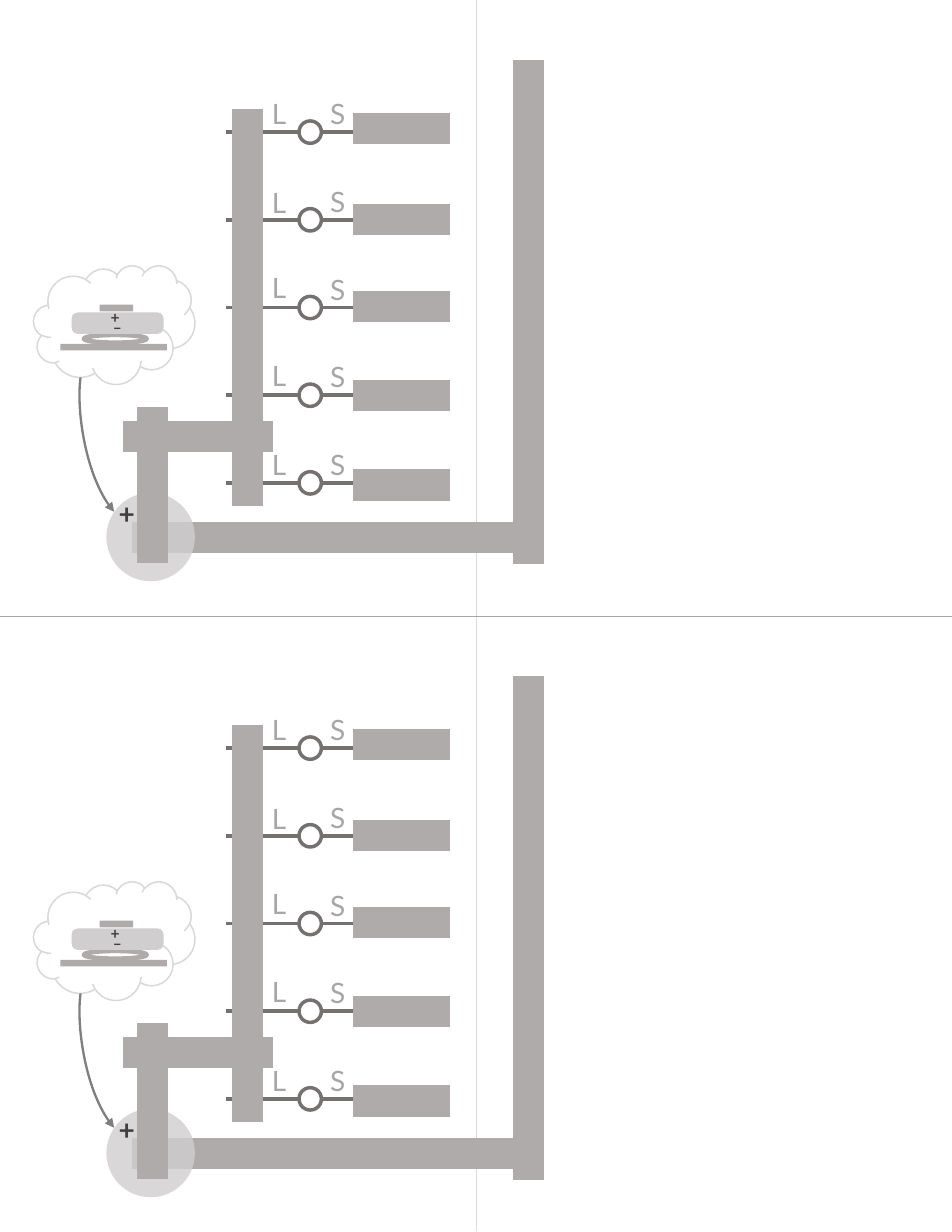
from dataclasses import dataclass

from lxml.etree import SubElement
from pptx import Presentation
from pptx.dml.color import RGBColor
from pptx.enum.shapes import MSO_CONNECTOR, MSO_SHAPE
from pptx.enum.text import MSO_AUTO_SIZE
from pptx.oxml.ns import qn
from pptx.util import Inches, Pt

COLUMNS, ROWS = 85, 55  # grid of one panel
TRACE, WIRE, PALE, DARK = "AFABAB", "767171", "D0CECE", "404040"
LETTER, CLOUD, ARROW = "A6A6A6", "D9D9D9", "7F7F7F"
FONT = "Lato"

# One light per row: rows of the pad and of the tops of its two letters
LIGHTS = [
    (11.5, 8.1, 8.1),
    (19.6, 16.1, 16.0),
    (27.4, 23.7, 23.8),
    (35.3, 31.5, 31.6),
    (43.3, 39.5, 39.5),
]
FIRST_WIRE, WIRE_STEP = 11.8, 7.83


@dataclass
class Box:
    left: int
    top: int
    width: int
    height: int

    def across(self, columns):
        return round(self.width * columns / COLUMNS)

    def down(self, rows):
        return round(self.height * rows / ROWS)

    def point(self, column, row):
        return self.left + self.across(column), self.top + self.down(row)

    def area(self, column, row, columns, rows):
        return *self.point(column, row), self.across(columns), self.down(rows)


def color(value):
    return RGBColor.from_string(value)


def set_line(line, value, points):
    line.color.rgb = color(value)
    line.width = Pt(points)


def add_line(shapes, box, start, end, value=TRACE, points=20):
    line = shapes.add_connector(
        MSO_CONNECTOR.STRAIGHT, *box.point(*start), *box.point(*end))
    set_line(line.line, value, points)
    SubElement(line._element.spPr, qn("a:effectLst"))


def add_figure(shapes, kind, area, fill=None, outline=None):
    figure = shapes.add_shape(kind, *area)
    figure.shadow.inherit = False
    if fill:
        figure.fill.solid()
        figure.fill.fore_color.rgb = color(fill)
    else:
        figure.fill.background()
    if outline:
        set_line(figure.line, *outline)
    else:
        figure.line.fill.background()
    return figure


def add_label(shapes, area, text, value=LETTER, size=18, bold=False):
    frame = shapes.add_textbox(*area).text_frame
    frame.word_wrap = False
    frame.auto_size = MSO_AUTO_SIZE.SHAPE_TO_FIT_TEXT
    frame.text = text
    font = frame.paragraphs[0].runs[0].font
    font.name, font.size, font.bold = FONT, Pt(size), bold
    font.color.rgb = color(value)


def add_curve(shapes, points):
    builder = shapes.build_freeform(*points[0])
    builder.add_line_segments(points[1:], close=False)
    curve = builder.convert_to_shape()
    curve.shadow.inherit = False
    curve.fill.background()
    set_line(curve.line, ARROW, 1.5)
    SubElement(curve.line._get_or_add_ln(), qn("a:tailEnd"), type="triangle")
    # Turn the three straight segments into one Bezier segment
    outline = next(curve._element.iter(qn("a:path")))
    segments = outline.findall(qn("a:lnTo"))
    bezier = SubElement(outline, qn("a:cubicBezTo"))
    for segment in segments:
        bezier.append(segment[0])
        outline.remove(segment)


def add_quarters(shapes, area):
    table = shapes.add_table(2, 2, *area).table
    table.first_row = table.horz_banding = False
    for row in range(2):
        for column in range(2):
            cell = table.cell(row, column)
            cell.fill.background()
            properties = cell._tc.get_or_add_tcPr()
            borders = [("a:lnL" if column else "a:lnR", "D9D9D9", 0.25),
                       ("a:lnT" if row else "a:lnB", "A6A6A6", 0.5)]
            for index, (side, value, points) in enumerate(borders):
                border = SubElement(properties, qn(side), w=str(Pt(points)))
                fill = SubElement(border, qn("a:solidFill"))
                SubElement(fill, qn("a:srgbClr"), val=value)
                properties.insert(index, border)


def add_lights(shapes, box):
    # Wires with round lights
    group = shapes.add_group_shape()
    for index in range(len(LIGHTS)):
        row = FIRST_WIRE + index * WIRE_STEP
        add_line(group.shapes, box, (35.2, row), (20.2, row), WIRE, 2.25)
        add_figure(group.shapes, MSO_SHAPE.OVAL, box.area(26.7, row - 1, 2, 2),
                   "FFFFFF", (WIRE, 2.25))
    # Shared trace, pads and leg letters
    add_line(shapes, box, (22.1, 9.7), (22.1, 45.2))
    for pad, long_leg, short_leg in LIGHTS:
        add_line(shapes, box, (40.2, pad), (31.5, pad))
        add_label(shapes, box.area(23.3, long_leg, 3.2, 4), "L")
        add_label(shapes, box.area(28.5, short_leg, 3.4, 4), "S")


def add_battery_spot(shapes, box):
    spot = add_figure(shapes, MSO_SHAPE.OVAL, box.area(9.5, 44, 7.9, 7.9), PALE)
    tint = next(spot._element.spPr.iter(qn("a:srgbClr")))
    SubElement(tint, qn("a:alpha"), val="80000")
    add_line(shapes, box, (13.6, 36.3), (13.6, 50.3))
    add_label(shapes, box.area(9.6, 43.8, 3.8, 4), "+", DARK, bold=True)


def add_battery_cloud(shapes, box):
    add_figure(shapes, MSO_SHAPE.CLOUD, box.area(3, 23.7, 14.4, 10.6),
               "FFFFFF", (CLOUD, 1))
    # Battery between two traces
    add_figure(shapes, MSO_SHAPE.RECTANGLE, box.area(5.4, 30.7, 9.5, 0.6), TRACE)
    add_figure(shapes, MSO_SHAPE.OVAL, box.area(7.5, 29.9, 5.6, 0.7),
               outline=(TRACE, 3))
    battery = add_figure(shapes, MSO_SHAPE.ROUNDED_RECTANGLE,
                         box.area(6.4, 27.9, 8.2, 1.9), PALE)
    battery.adjustments[0] = 0.28
    add_label(shapes, box.area(9.1, 27.9, 2.7, 2.7), "–", DARK, 10, True)
    add_label(shapes, box.area(8.9, 27, 3, 2.7), "+", DARK, 10, True)
    # Arrow to the battery spot
    add_curve(shapes, [box.point(7.2, 33.7), box.point(6.8, 36.5),
                       box.point(7.7, 42.9), box.point(10.2, 45.7)])
    add_figure(shapes, MSO_SHAPE.RECTANGLE, box.area(8.9, 27.2, 3, 0.6), TRACE)


def add_circuit(shapes, box):
    # Traces that join the battery to the lights
    add_line(shapes, box, (11.8, 48), (48.2, 48))
    add_line(shapes, box, (24.4, 39), (11, 39))
    add_line(shapes, box, (47.2, 5.4), (47.2, 50.4))
    add_lights(shapes, box)
    add_battery_spot(shapes, box)
    add_battery_cloud(shapes, box)


def main():
    deck = Presentation()
    deck.slide_width, deck.slide_height = Inches(8.5), Inches(11)
    page = deck.slides.add_slide(deck.slide_layouts[6])
    add_quarters(page.shapes, (0, 0, deck.slide_width, deck.slide_height))
    half = deck.slide_height // 2
    for top in (half, 0):
        add_circuit(page.shapes, Box(0, top, deck.slide_width, half))
    deck.save("out.pptx")


if __name__ == "__main__":
    main()
